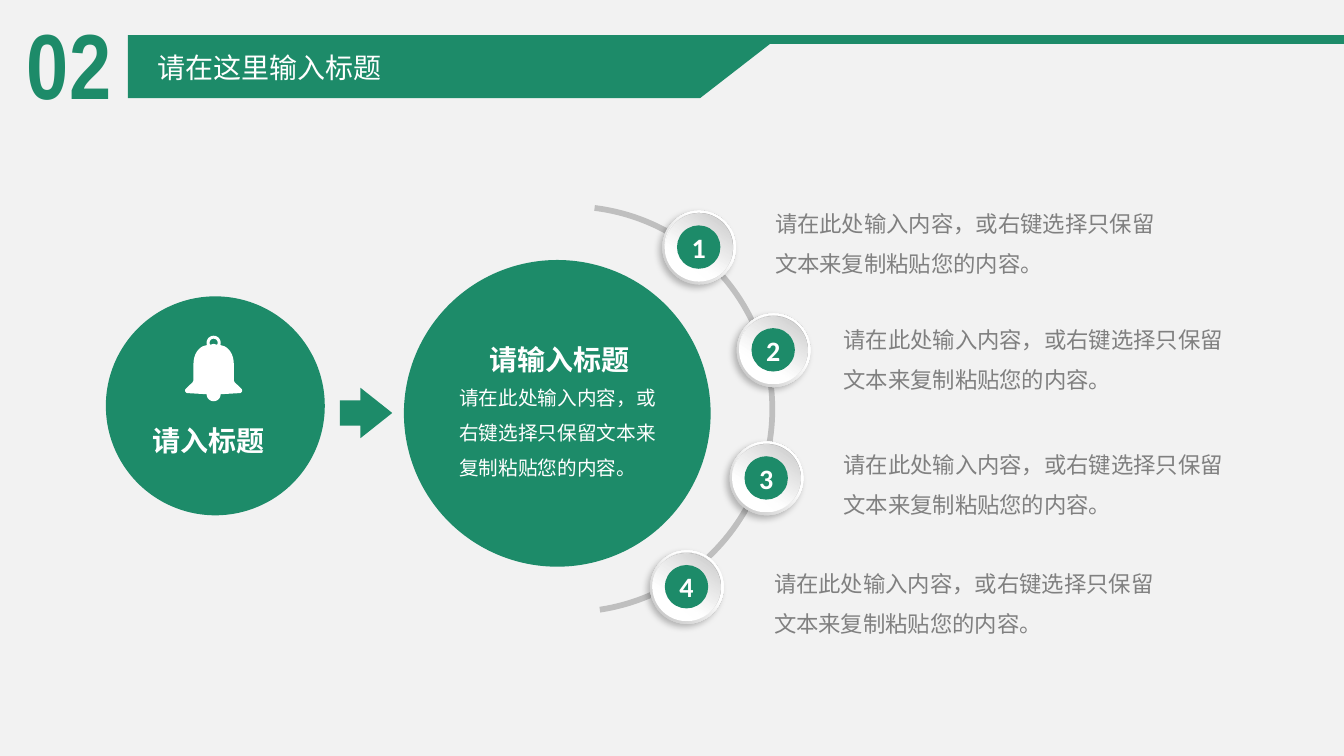
import math

import pptx
import pptx.dml.color
import pptx.enum.shapes
import pptx.enum.text
import pptx.oxml
import pptx.oxml.ns
import pptx.util

Pt = pptx.util.Pt
SHAPE = pptx.enum.shapes.MSO_SHAPE
ALIGN = pptx.enum.text.PP_ALIGN
ANCHOR = pptx.enum.text.MSO_ANCHOR

COLORS = {"green": "1D8B69", "white": "FFFFFF", "page": "F2F2F2", "arc": "BFBFBF",
          "rim": "D9D9D9", "text": "808080", "shadow": "000000"}
CJK = "Noto Sans CJK SC"
NAMESPACE = pptx.oxml.ns.nsdecls("a")
CONTENT = "请在此处输入内容，或右键选择只保留文本来复制粘贴您的内容。"

# Badge corner, then caption corner
ITEMS = [
    ((473.1, 150.5), (546.5, 136.8)),
    ((526.3, 223.9), (595.4, 219.6)),
    ((521.3, 315.4), (595.4, 308.9)),
    ((464.4, 393.1), (545.8, 393.8)),
]


def color(name):
    return pptx.dml.color.RGBColor.from_string(COLORS[name])


def write(shape, text, font=CJK, size=16, fill="text", bold=False, spacing=1.0,
          align=ALIGN.LEFT, anchor=ANCHOR.TOP, wrap=True):
    frame = shape.text_frame
    frame.word_wrap = wrap
    frame.auto_size = pptx.enum.text.MSO_AUTO_SIZE.NONE
    frame.vertical_anchor = anchor
    para = frame.paragraphs[0]
    para.alignment = align
    para.line_spacing = spacing
    span = para.add_run()
    span.text = text
    span.font.size = Pt(size)
    span.font.bold = bold
    span.font.color.rgb = color(fill)
    span.font.name = font
    span.font._element.append(
        pptx.oxml.parse_xml(f'<a:ea {NAMESPACE} typeface="{font}"/>'))


def add_text(shapes, left, top, width, height, text, **style):
    box = shapes.add_textbox(Pt(left), Pt(top), Pt(width), Pt(height))
    write(box, text, **style)


def paint(shape, fill):
    shape.shadow.inherit = False
    shape.line.fill.background()
    shape.fill.solid()
    shape.fill.fore_color.rgb = color(fill)


def add_solid(shapes, kind, left, top, width, height, fill="green", adjust=()):
    shape = shapes.add_shape(kind, Pt(left), Pt(top), Pt(width), Pt(height))
    paint(shape, fill)
    for index, value in enumerate(adjust):
        shape.adjustments[index] = value
    return shape


def set_gradient(shape, stops, direction):
    """Fill with (percent, colour, opacity percent) stops along the given direction XML."""
    marks = "".join(
        f'<a:gs pos="{percent * 1000}"><a:srgbClr val="{COLORS[name]}">'
        f'<a:alpha val="{opacity * 1000}"/></a:srgbClr></a:gs>'
        for percent, name, opacity in stops)
    gradient = pptx.oxml.parse_xml(
        f'<a:gradFill {NAMESPACE} rotWithShape="1"><a:gsLst>{marks}</a:gsLst>{direction}</a:gradFill>')
    flat = shape.element.spPr.find(pptx.oxml.ns.qn("a:solidFill"))
    flat.getparent().replace(flat, gradient)


def set_shadow(shape):
    effects = shape.element.spPr.find(pptx.oxml.ns.qn("a:effectLst"))
    effects.append(pptx.oxml.parse_xml(
        f'<a:outerShdw {NAMESPACE} blurRad="{Pt(5)}" dist="{Pt(3)}" dir="8100000" algn="tr" '
        f'rotWithShape="0"><a:srgbClr val="{COLORS["shadow"]}"><a:alpha val="25000"/>'
        '</a:srgbClr></a:outerShdw>'))


def add_badge(shapes, left, top, number):
    group = shapes.add_group_shape().shapes

    def disc(inset, size):
        return add_solid(group, SHAPE.OVAL, left + inset, top + inset, size, size)

    corner = '<a:path path="circle"><a:fillToRect l="100000" b="100000"/></a:path>'
    slope = '<a:lin ang="18000000" scaled="0"/>'
    base = disc(0, 52.6)
    set_gradient(base, [(33, "white", 100), (100, "arc", 100)], corner)
    set_shadow(base)
    set_gradient(disc(1.6, 49),
                 [(0, "white", 100), (30, "white", 100), (100, "rim", 100)], slope)
    gloss = disc(2.1, 48.2)
    gloss.rotation = 6.8
    set_gradient(gloss, [(0, "white", 0), (30, "white", 0), (100, "arc", 100)], slope)
    core = disc(10.5, 31)
    frame = core.text_frame
    frame.margin_left = frame.margin_right = frame.margin_top = frame.margin_bottom = 0
    write(core, str(number), font="Calibri", size=20, fill="white", bold=True,
          align=ALIGN.CENTER, anchor=ANCHOR.MIDDLE, wrap=False)


def add_outline(shapes, contours, fill):
    """Closed polygons, points in pt, drawn as one shape."""
    rings = [[(x * 100, y * 100) for x, y in contour] for contour in contours]
    builder = shapes.build_freeform(*rings[0][0], scale=Pt(1) / 100)
    builder.add_line_segments(rings[0][1:], close=True)
    for ring in rings[1:]:
        builder.move_to(*ring[0])
        builder.add_line_segments(ring[1:], close=True)
    paint(builder.convert_to_shape(), fill)


def arc(x, y, radius_x, radius_y, start, end, steps=12):
    angles = [math.radians(start + (end - start) * step / steps) for step in range(steps + 1)]
    return [(x + radius_x * math.cos(a), y + radius_y * math.sin(a)) for a in angles]


def add_bell(shapes, center, top):
    right = (arc(0, 5, 5, 5, -90, 17) + arc(4.4, 20, 10, 13.2, -85, 0)
             + [(14.4, 32), (15, 33.2), (20.2, 38.2)]
             + arc(18.4, 39.2, 2, 1.8, -20, 90) + arc(0, 41.8, 5, 5, 0, 90))
    left = [(-x, y) for x, y in reversed(right)]
    hole = arc(0, 5, 2.9, 2.9, 150, 390) + [(0, 5.8)]
    add_outline(shapes, [[(center + x, top + y) for x, y in contour]
                         for contour in (right + left, hole)], "white")


def add_header(slide):
    shapes = slide.shapes
    rule = shapes.add_connector(pptx.enum.shapes.MSO_CONNECTOR.STRAIGHT,
                                Pt(488), Pt(28.1), Pt(960), Pt(28.1))
    rule.line.color.rgb = color("green")
    rule.line.width = Pt(6)
    rule.element.spPr.append(pptx.oxml.parse_xml(f"<a:effectLst {NAMESPACE}/>"))
    add_outline(shapes, [[(91.4, 25.2), (558, 25.2), (500, 70.2), (91.4, 70.2)]], "green")
    add_text(shapes, 12.2, 1.4, 114.5, 87.1, "02",
             font="Arial Narrow", size=66, fill="green", bold=True)
    title = shapes.title
    title.left, title.top, title.width, title.height = Pt(105), Pt(32.4), Pt(240.5), Pt(31.7)
    write(title, "请在这里输入标题", size=20, fill="white")
    title.element.getparent().append(title.element)


def main():
    deck = pptx.Presentation()
    deck.slide_width, deck.slide_height = Pt(960), Pt(540)
    slide = deck.slides.add_slide(deck.slide_layouts.get_by_name("Title Only"))
    slide.background.fill.solid()
    slide.background.fill.fore_color.rgb = color("page")
    shapes = slide.shapes
    add_header(slide)

    heading = {"size": 20, "fill": "white", "bold": True, "spacing": 1.5}
    add_solid(shapes, SHAPE.OVAL, 75.6, 211.7, 156.4, 156.4)
    add_bell(shapes, 152.6, 239.8)
    add_text(shapes, 102, 286.6, 122.4, 39.6, "请入标题", **heading)
    add_solid(shapes, SHAPE.RIGHT_ARROW, 242.8, 277, 37.4, 36, adjust=(0.5, 0.63))

    add_solid(shapes, SHAPE.OVAL, 288.5, 185.7, 219.1, 219.1)
    add_text(shapes, 342.7, 229, 122.4, 39.6, "请输入标题", **heading)
    add_text(shapes, 321, 263.5, 154.8, 83.5, CONTENT, size=14, fill="white", spacing=1.5)

    track = add_solid(shapes, SHAPE.BLOCK_ARC, 259.9, 145.4, 293.8, 293.8,
                      fill="arc", adjust=(117.42, 0, 0.014))
    track.rotation = 81.4
    for number, (badge, caption) in enumerate(ITEMS, start=1):
        add_badge(shapes, *badge, number)
        add_text(shapes, *caption, 287.3, 61.9, CONTENT, spacing=1.5)

    deck.save("out.pptx")


if __name__ == "__main__":
    main()
